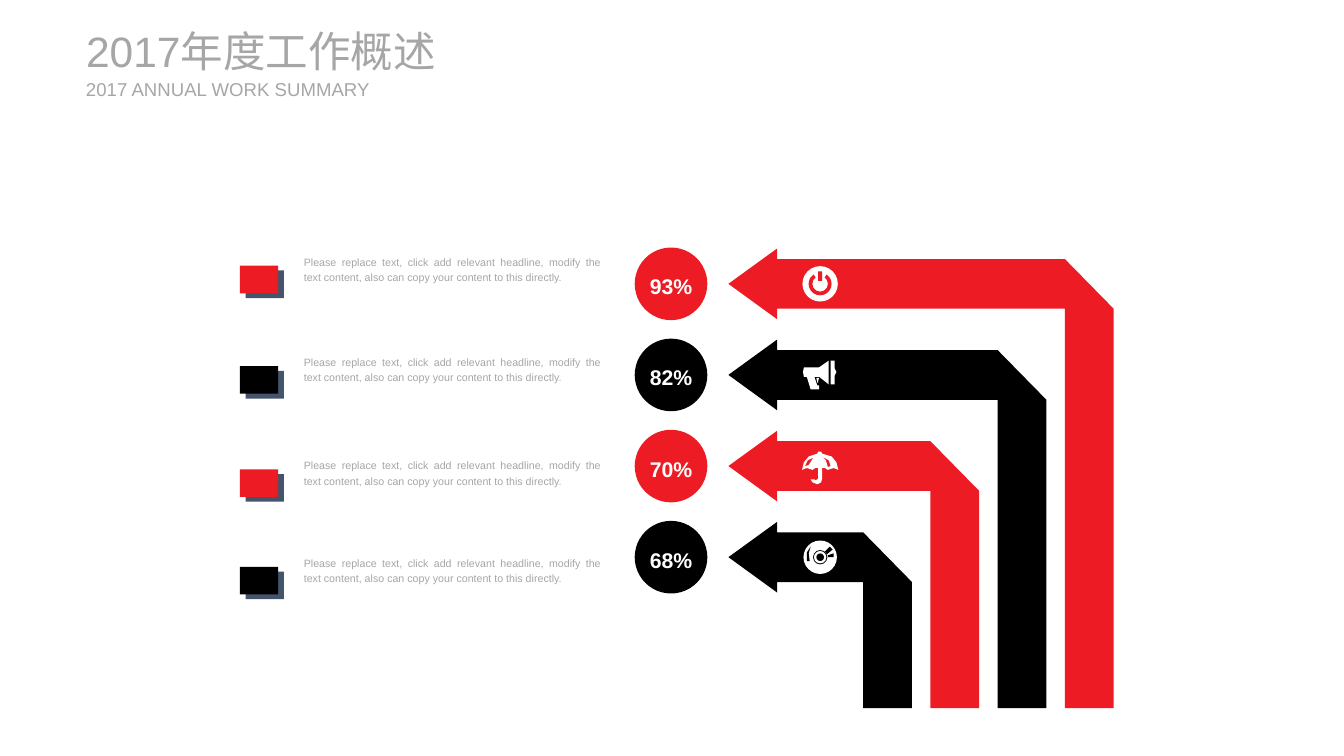
import dataclasses

import pptx
import pptx.dml.color
import pptx.enum.shapes
import pptx.enum.text
import pptx.util

Inches = pptx.util.Inches
Kind = pptx.enum.shapes.MSO_SHAPE
Align = pptx.enum.text.PP_ALIGN
Anchor = pptx.enum.text.MSO_ANCHOR
Fit = pptx.enum.text.MSO_AUTO_SIZE


@dataclasses.dataclass(frozen=True)
class Theme:
    red: str = "ED1C24"
    black: str = "000000"
    white: str = "FFFFFF"
    grey: str = "A6A6A6"
    slate: str = "44546A"
    font: str = "Arial"
    title: int = 32
    sub: int = 14
    rate: int = 16
    note: int = 8


THEME = Theme()
TONES = (THEME.red, THEME.black) * 2
RATES = ("93%", "82%", "70%", "68%")
NOTE = ("Please replace text, click add relevant headline, modify the text "
        "content, also can copy your content to this directly.")
NOTE_TOPS = (2.6, 3.65, 4.73, 5.75)
FLUSH = dict.fromkeys(
    ("margin_left", "margin_right", "margin_top", "margin_bottom"), 0)

# Icon outlines, in hundredths of an inch from the icon centre
HORN = (
    [(-17, -8), (-1, -8), (9, -15), (9, 10), (-1, 2), (-6, 2), (-3, 11),
     (-1, 11), (-1, 15), (-10, 15), (-14, 2), (-17, 2), (-18, -3)],
    [(11, -15), (15, -15), (15, -7), (17, -3), (15, 1), (15, 10), (11, 10)],
    [(-1, 3), (-4, 3), (-3, 8), (-2, 8), (-2, 6)],
)
BROLLY = (
    [(-19, 4), (-17, -4), (-12, -10), (-3, -13), (-2, -15), (1, -15),
     (2, -13), (12, -10), (17, -4), (19, 4), (14, 2), (8, 4), (5, 2),
     (2, 2), (2, 13), (1, 17), (-3, 19), (-8, 17), (-10, 14), (-6, 14),
     (-5, 15), (-3, 14), (-2, 13), (-2, 2), (-5, 2), (-8, 4), (-14, 2)],
    [(8, 1), (11, 0), (9, -6), (2, -10), (6, -6)],
    [(-16, 0), (-12, -1), (-7, -9), (-13, -6)],
)
GLINTS = (
    [(-10, -11), (-14, -5), (-14, 4), (-11, 4), (-12, -4)],
    [(5, -6), (10, -11), (13, -8), (7, -3)],
    [(8, -2), (14, -4), (14, 0), (8, 0)],
)


def apply(item, values):
    for name, value in values.items():
        setattr(item, name, value)


def paint(shape, tone):
    shape.shadow.inherit = False
    shape.fill.solid()
    shape.fill.fore_color.rgb = pptx.dml.color.RGBColor.from_string(tone)
    shape.line.fill.background()
    return shape


def block(slide, kind, box, tone):
    return paint(slide.shapes.add_shape(kind, *map(Inches, box)), tone)


def disc(slide, x, y, size, tone):
    half = size / 2
    return block(slide, Kind.OVAL, (x - half, y - half, size, size), tone)


def outline(slide, loops, tone):
    """Draw closed loops as one shape; inner loops become holes."""
    loops = [[(Inches(x), Inches(y)) for x, y in loop] for loop in loops]
    pen = slide.shapes.build_freeform(*loops[0][0])
    for count, loop in enumerate(loops):
        if count:
            pen.move_to(*loop[0])
        pen.add_line_segments(loop[1:], close=True)
    return paint(pen.convert_to_shape(), tone)


def glyph(slide, loops, x, y, tone):
    moved = [[(x + dx / 100, y + dy / 100) for dx, dy in loop]
             for loop in loops]
    outline(slide, moved, tone)


def write(shape, text, size, tone, frame=None, para=None, bold=False):
    body = shape.text_frame
    apply(body, {"word_wrap": True, "auto_size": Fit.NONE, **(frame or {})})
    line = body.paragraphs[0]
    apply(line, para or {})
    run = line.add_run()
    run.text = text
    apply(run.font, {"name": THEME.font, "size": pptx.util.Pt(size),
                     "bold": bold})
    run.font.color.rgb = pptx.dml.color.RGBColor.from_string(tone)


def header(slide, x, y):
    style = {**FLUSH, "vertical_anchor": Anchor.MIDDLE}
    head = slide.shapes.title
    place = (x, y, 4.32, 0.54)
    for name, value in zip(("left", "top", "width", "height"), place):
        setattr(head, name, Inches(value))
    write(head, "2017年度工作概述", THEME.title, THEME.grey, style,
          {"alignment": Align.LEFT})
    sub = slide.shapes.add_textbox(*map(Inches, (x, y + 0.55, 3.07, 0.24)))
    write(sub, "2017 ANNUAL WORK SUMMARY", THEME.sub, THEME.grey, style)


def note(slide, x, y, tone):
    block(slide, Kind.RECTANGLE, (x + 0.06, y + 0.23, 0.4, 0.29), THEME.slate)
    block(slide, Kind.RECTANGLE, (x, y + 0.18, 0.4, 0.29), tone)
    text = slide.shapes.add_textbox(*map(Inches, (x + 0.57, y, 3.31, 0.41)))
    write(text, NOTE, THEME.note, THEME.grey,
          para={"alignment": Align.JUSTIFY, "line_spacing": 1.2})


def badge(slide, x, y, rate, tone):
    write(disc(slide, x, y, 0.76, tone), rate, THEME.rate, THEME.white,
          {**FLUSH, "word_wrap": False, "vertical_anchor": Anchor.MIDDLE},
          {"alignment": Align.CENTER, "line_spacing": 1.2}, True)


def arrow(slide, tip, y, stem, foot, tone):
    """Draw an arrow that rises from foot along stem and turns left to tip."""
    neck, edge = tip + 0.51, stem + 0.51
    top, base = y - 0.26, y + 0.26
    outline(slide, [[
        (neck, y - 0.37), (neck, top), (stem, top), (edge, base),
        (edge, foot), (stem, foot), (stem, base), (neck, base),
        (neck, y + 0.37), (tip, y)]], tone)


def power(slide, x, y, tone):
    disc(slide, x, y, 0.37, THEME.white)
    ring = block(slide, Kind.BLOCK_ARC, (x - 0.12, y - 0.12, 0.24, 0.24), tone)
    turn = 0.6  # adjustment units per degree
    for spot, value in enumerate((305 * turn, 235 * turn, 0.16)):
        ring.adjustments[spot] = value
    block(slide, Kind.RECTANGLE, (x - 0.02, y - 0.13, 0.04, 0.1), tone)


def horn(slide, x, y, tone):
    glyph(slide, HORN, x, y, THEME.white)


def brolly(slide, x, y, tone):
    glyph(slide, BROLLY, x, y, THEME.white)


def record(slide, x, y, tone):
    sizes = (0.35, 0.15, 0.13, 0.08)
    for size, ink in zip(sizes, (THEME.white, tone) * 2):
        disc(slide, x, y, size, ink)
    glyph(slide, GLINTS, x, y, tone)


def chart(slide, x, y):
    """Place the four badges and nested arrows from the first badge centre."""
    drop, shift = 2.86 / 3, 2.11 / 3
    icons = (power, horn, brolly, record)
    for row, (rate, tone, icon) in enumerate(zip(RATES, TONES, icons)):
        level = y + row * drop
        badge(slide, x, level, rate, tone)
        arrow(slide, x + 0.6, level, x + 4.12 - row * shift, y + 4.44, tone)
        icon(slide, x + 1.56, level, tone)


def main():
    deck = pptx.Presentation()
    apply(deck, {"slide_width": Inches(14.06), "slide_height": Inches(7.91)})
    slide = deck.slides.add_slide(deck.slide_layouts[5])
    header(slide, 0.9, 0.26)
    chart(slide, 7.02, 2.97)
    for top, tone in zip(NOTE_TOPS, TONES):
        note(slide, 2.51, top, tone)
    deck.save("out.pptx")


if __name__ == "__main__":
    main()
